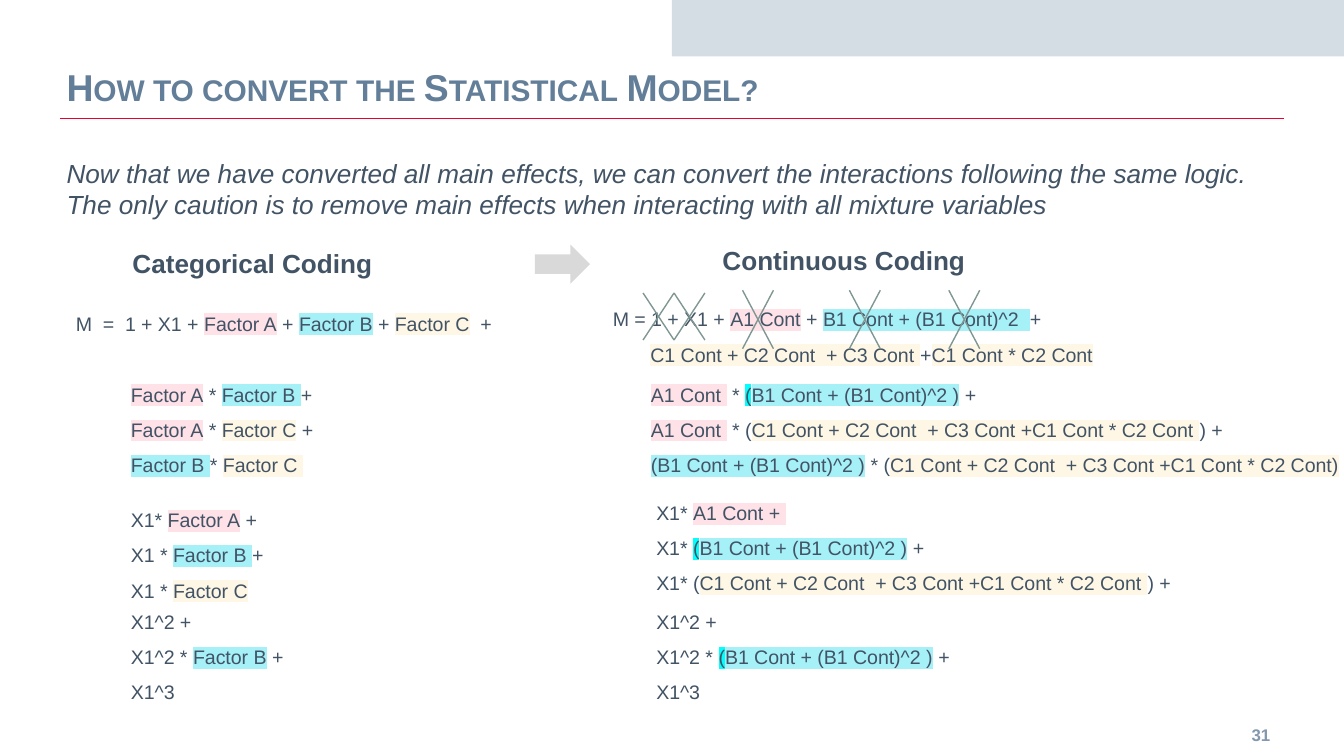
import pptx
import pptx.util
import pptx.dml.color
import pptx.enum.shapes
import pptx.enum.text
import lxml.etree
from pptx.oxml.ns import qn

RGBColor = pptx.dml.color.RGBColor
WHITE = RGBColor(0xFF, 0xFF, 0xFF)
BAND = RGBColor(0xD5, 0xDD, 0xE4)
RULE = RGBColor(0xE8, 0x00, 0x33)
TITLE = RGBColor(0x63, 0x7E, 0x98)
NUMBER = RGBColor(0x82, 0x98, 0xAD)
TEXT = RGBColor(0x41, 0x53, 0x64)
CROSS = RGBColor(0x7F, 0x96, 0x92)
ARROW = RGBColor(0xD9, 0xD9, 0xD9)
PINK = RGBColor(0xFF, 0xE1, 0xE8)
CYAN = RGBColor(0xA6, 0xF0, 0xF8)
AQUA = RGBColor(0x00, 0xFF, 0xFF)
CREAM = RGBColor(0xFF, 0xF7, 0xE5)

COLUMNS = 100
ROWS = COLUMNS * 9 / 16
LEFT, ANCHOR_MIDDLE = pptx.enum.text.PP_ALIGN.LEFT, pptx.enum.text.MSO_ANCHOR.MIDDLE
SHAPES = pptx.enum.shapes.MSO_SHAPE

BREAK = "\n"
FACTOR_A, FACTOR_B, FACTOR_C = ("Factor A", PINK), ("Factor B", CYAN), ("Factor C", CREAM)
FACTOR_B_SPACED = ("Factor B ", CYAN)
A_CONT = ("A1 Cont ", PINK)
B_CONT = [("(", AQUA), ("B1 Cont + (B1 Cont)^2 )", CYAN)]
C_CONT = ("C1 Cont + C2 Cont  + C3 Cont +C1 Cont * C2 Cont ", CREAM)


class SlideBuilder:
    font_name = "Arial"

    def __init__(self, presentation):
        self.column = presentation.slide_width / COLUMNS
        self.row = presentation.slide_height / ROWS
        self.slide = presentation.slides.add_slide(presentation.slide_layouts[5])
        self.slide.background.fill.solid()
        self.slide.background.fill.fore_color.rgb = WHITE

    def place(self, left, top, width, height):
        return (round(left * self.column), round(top * self.row),
                round(width * self.column), round(height * self.row))

    def style(self, paragraph, size, color, bold=False, italic=False, align=LEFT):
        paragraph.alignment = align
        font = paragraph.font
        font.name, font.size = self.font_name, pptx.util.Pt(size)
        font.bold, font.italic = bold, italic
        font.color.rgb = color

    def title(self, text, box):
        shape = self.slide.shapes.title
        shape.left, shape.top, shape.width, shape.height = self.place(*box)
        frame = shape.text_frame
        frame.text = text
        frame.auto_size = pptx.enum.text.MSO_AUTO_SIZE.NONE
        frame.vertical_anchor = ANCHOR_MIDDLE
        frame.margin_left = frame.margin_right = pptx.util.Inches(0.05)
        self.style(frame.paragraphs[0], 20, TITLE, bold=True)
        frame.paragraphs[0].runs[0].font._element.set("cap", "small")

    def shape(self, kind, box, color):
        shape = self.slide.shapes.add_shape(kind, *self.place(*box))
        shape.shadow.inherit = False
        shape.fill.solid()
        shape.fill.fore_color.rgb = color
        shape.line.fill.background()

    def line(self, start, end, color):
        connector = self.slide.shapes.add_connector(
            pptx.enum.shapes.MSO_CONNECTOR.STRAIGHT,
            *self.place(*start, *end))
        connector.line.color.rgb = color
        connector.line.width = pptx.util.Pt(0.75)
        lxml.etree.SubElement(connector._element.spPr, qn("a:effectLst"))

    def cross(self, left, top, width, height):
        right, bottom = left + width, top + height
        self.line((left, top), (right, bottom), CROSS)
        self.line((right, top), (left, bottom), CROSS)

    def text(self, paragraphs, box, size=14, color=TEXT, margin=0.05, spacing=(1,),
             indent=0, anchor=pptx.enum.text.MSO_ANCHOR.TOP, **style):
        frame = self.slide.shapes.add_textbox(*self.place(*box)).text_frame
        frame.word_wrap = True
        frame.vertical_anchor = anchor
        frame.margin_left = frame.margin_right = pptx.util.Inches(margin)
        for index, parts in enumerate(paragraphs):
            paragraph = frame.add_paragraph() if index else frame.paragraphs[0]
            paragraph.line_spacing = spacing[min(index, len(spacing) - 1)]
            if index == len(paragraphs) - 1 and indent:
                paragraph._p.get_or_add_pPr().set("marL", str(round(indent * self.column)))
            self.style(paragraph, size, color, **style)
            for part in parts:
                if part == BREAK:
                    paragraph.add_line_break()
                else:
                    self.run(paragraph, *([part] if isinstance(part, str) else part))

    def run(self, paragraph, text, highlight=None):
        run = paragraph.add_run()
        run.text = text
        if highlight is not None:
            mark = lxml.etree.SubElement(run.font._element, qn("a:highlight"))
            lxml.etree.SubElement(mark, qn("a:srgbClr")).set("val", str(highlight))

    def formula(self, paragraphs, box, margin=0.1, spacing=(1.5,), indent=0):
        self.text(paragraphs, box, 10.5, margin=margin, spacing=spacing, indent=indent)


def main():
    presentation = pptx.Presentation()
    presentation.slide_width = pptx.util.Inches(10)
    presentation.slide_height = presentation.slide_width * 9 // 16
    builder = SlideBuilder(presentation)

    builder.shape(SHAPES.RECTANGLE, (50, 0, 50, 4.2), BAND)
    builder.line((4.45, 8.8), (95.5, 8.8), RULE)
    builder.title("How to convert the Statistical Model?", (4.45, 4.15, 91.1, 4.6))
    builder.text([["31"]], (90.4, 53.2, 5.1, 3), 9, NUMBER, margin=0.1,
                 anchor=ANCHOR_MIDDLE, bold=True, align=pptx.enum.text.PP_ALIGN.RIGHT)
    builder.text(
        [["Now that we have converted all main effects, we can convert the interactions "
          "following the same logic.", BREAK,
          "The only caution is to remove main effects when interacting with all mixture variables"]],
        (4.45, 11.2, 91.1, 5.7), italic=True)
    builder.text([["Categorical Coding"]], (9.35, 17.9, 21.8, 3.9), bold=True)
    builder.text([["Continuous Coding"]], (53.25, 17.7, 21.8, 3.9), bold=True)
    builder.shape(SHAPES.RIGHT_ARROW, (39.8, 18.2, 4.1, 2.9), ARROW)

    builder.formula(
        [["M  =  1 + X1 + ", FACTOR_A, " + ", FACTOR_B, " + ", FACTOR_C, "  +"]],
        (2.45, 20.95, 44.3, 5.7), margin=0.05, spacing=(2,), indent=2.7)
    builder.formula(
        [[FACTOR_A, " * ", FACTOR_B_SPACED, "+ ", BREAK,
          FACTOR_A, " * ", FACTOR_C, " +", BREAK,
          FACTOR_B_SPACED, "* ", ("Factor C ", CREAM)]],
        (8.75, 27.1, 25.9, 8.6))
    builder.formula(
        [["X1* ", FACTOR_A, " +"],
         ["X1 * ", FACTOR_B_SPACED, "+ ", BREAK,
          "X1 * ", FACTOR_C]],
        (8.75, 36.45, 25.9, 8.6))
    builder.formula(
        [["X1^2 + ", BREAK, "X1^2 * ", FACTOR_B, " +", BREAK, "X1^3"]],
        (8.75, 44, 19.5, 8.6))

    builder.formula(
        [["M = 1 + X1 + ", ("A1 Cont", PINK), " + ", ("B1 Cont + (B1 Cont)^2  ", CYAN), "+ "],
         [("C1 Cont + C2 Cont  + C3 Cont ", CREAM), "+", ("C1 Cont * C2 Cont", CREAM)]],
        (45.1, 21.15, 49.1, 5.9), margin=0.05, spacing=(1.7, 1.5), indent=2.8)
    builder.formula(
        [[A_CONT, " * ", *B_CONT, " +", BREAK,
          A_CONT, " * (", C_CONT, ") +"],
         [("(B1 Cont + (B1 Cont)^2 )", CYAN), " * (",
          ("C1 Cont + C2 Cont  + C3 Cont +C1 Cont * C2 Cont)", CREAM)]],
        (47.45, 27.1, 56.7, 11.3))
    builder.formula(
        [["X1* ", ("A1 Cont + ", PINK), BREAK,
          "X1* ", *B_CONT, " +", BREAK,
          "X1* (", C_CONT, ") +"]],
        (47.85, 35.9, 48.4, 8.6))
    builder.formula(
        [["X1^2 + ", BREAK, "X1^2 * ", *B_CONT, " +", BREAK, "X1^3"]],
        (47.85, 44, 25.9, 8.6))

    for left in (47.85, 50.15):
        builder.cross(left, 21.8, 2.3, 3.5)
    for left in (55.25, 63.2, 70.6):
        builder.cross(left, 21.6, 2.3, 4.35)

    presentation.save("out.pptx")


if __name__ == "__main__":
    main()
